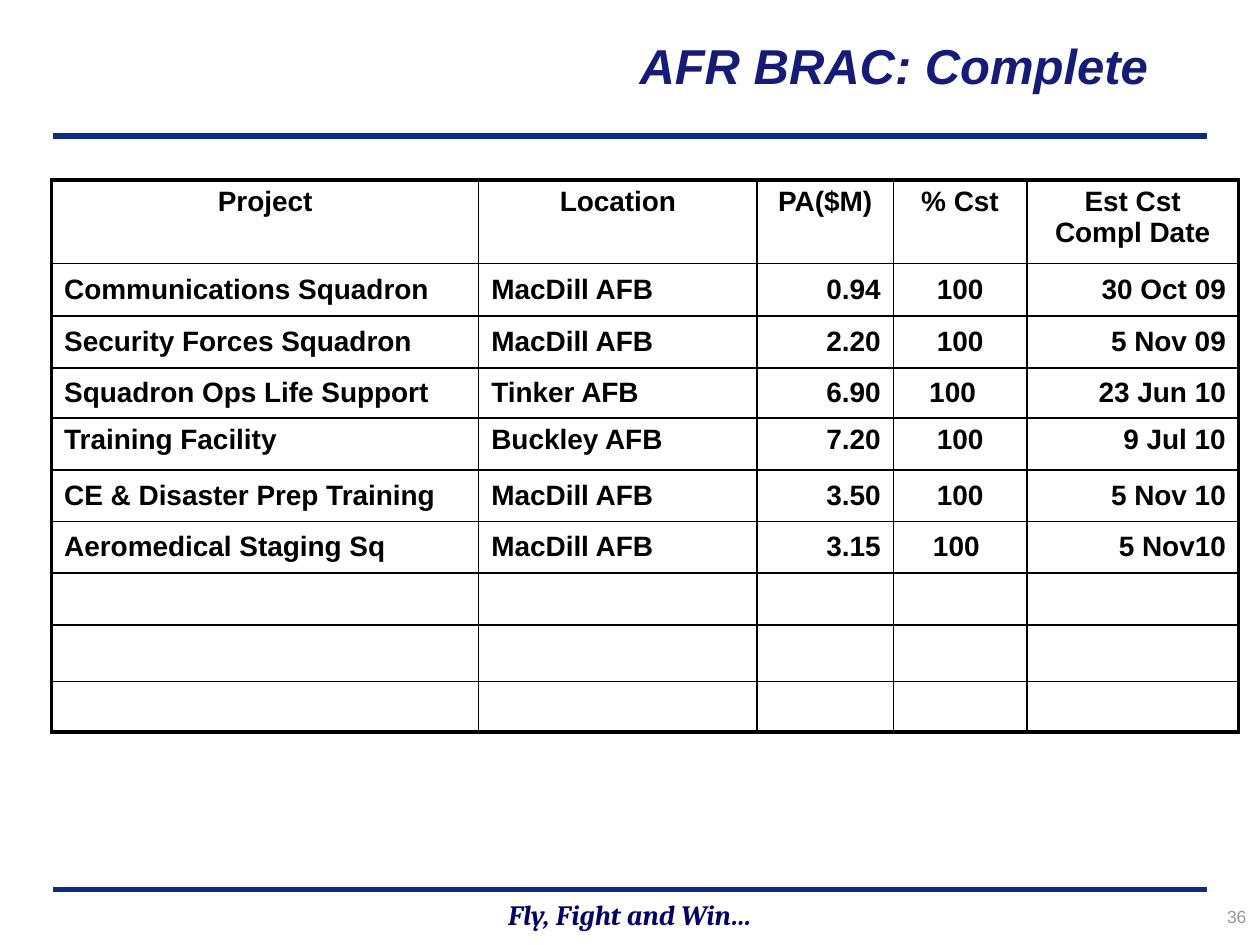
import pptx
import pptx.dml.color
import pptx.enum.shapes
import pptx.enum.text
import pptx.oxml.ns
import pptx.util
from lxml import etree

Inches = pptx.util.Inches
Pt = pptx.util.Pt
ALIGN = pptx.enum.text.PP_ALIGN
ANCHOR = pptx.enum.text.MSO_ANCHOR
qn = pptx.oxml.ns.qn

COLORS = {
    "title": "151C77",
    "rule": "0C2D83",
    "motto": "000066",
    "number": "969696",
    "table": "000000",
}
THICK, THIN = 2.25, 1

COLUMN_WIDTHS = [3.39, 2.21, 1.08, 1.06, 1.68]
ROW_HEIGHTS = [0.66, 0.42, 0.41, 0.4, 0.41, 0.41, 0.41, 0.41, 0.45, 0.4]
COLUMN_ALIGNS = [ALIGN.LEFT, ALIGN.LEFT, ALIGN.RIGHT, ALIGN.CENTER, ALIGN.RIGHT]
PROJECTS = [
    ["Project", "Location", "PA($M)", "% Cst", "Est Cst Compl Date"],
    ["Communications Squadron", "MacDill AFB", "0.94", "100", "30 Oct 09"],
    ["Security Forces Squadron", "MacDill AFB", "2.20", "100", "5 Nov 09"],
    ["Squadron Ops Life Support", "Tinker AFB", "6.90", "100", "23 Jun 10"],
    ["Training Facility", "Buckley AFB", "7.20", "100", "9 Jul 10"],
    ["CE & Disaster Prep Training", "MacDill AFB", "3.50", "100", "5 Nov 10"],
    ["Aeromedical Staging Sq", "MacDill AFB", "3.15", "100", "5 Nov10"],
]
TOP_ANCHORED_ROWS = {0, 4}
PERCENT_COLUMN = 3
PERCENT_RIGHT_MARGINS = {3: 0.22, 6: 0.16}


def write_text(frame, text, size, color, align, font="Arial", bold=False, italic=False):
    frame.text = text
    paragraph = frame.paragraphs[0]
    paragraph.alignment = align
    for span in paragraph.runs:
        span.font.name = font
        span.font.size = Pt(size)
        span.font.bold = bold
        span.font.italic = italic
        span.font.color.rgb = pptx.dml.color.RGBColor.from_string(COLORS[color])


def add_title(page, text):
    title = page.shapes.title
    title.left, title.top = Inches(1.46), Inches(0.19)
    title.width, title.height = Inches(7.75), Inches(0.74)
    frame = title.text_frame
    frame.vertical_anchor = ANCHOR.TOP
    frame.margin_top = Inches(0.09)
    write_text(frame, text, 28, "title", ALIGN.RIGHT, bold=True, italic=True)


def add_rule(page, top):
    line = page.shapes.add_connector(
        pptx.enum.shapes.MSO_CONNECTOR.STRAIGHT,
        Inches(0.42), Inches(top), Inches(9.58), Inches(top))
    line.line.width = Pt(3)
    line.line.color.rgb = pptx.dml.color.RGBColor.from_string(COLORS["rule"])
    etree.SubElement(line._element.spPr, qn("a:effectLst"))


def add_label(page, left, top, width, height, text, size, color, align,
              anchor=ANCHOR.TOP, **style):
    box = page.shapes.add_textbox(
        Inches(left), Inches(top), Inches(width), Inches(height))
    box.text_frame.word_wrap = True
    box.text_frame.vertical_anchor = anchor
    write_text(box.text_frame, text, size, color, align, **style)


def set_borders(cell, widths):
    """Draw the left, right, top and bottom borders with the given point widths."""
    properties = cell._tc.get_or_add_tcPr()
    for side, width in zip("LRTB", widths):
        border = etree.SubElement(properties, qn("a:ln" + side), w=str(Pt(width)))
        fill = etree.SubElement(border, qn("a:solidFill"))
        etree.SubElement(fill, qn("a:srgbClr"), val=COLORS["table"])


def add_project_table(page):
    row_count, column_count = len(ROW_HEIGHTS), len(COLUMN_WIDTHS)
    table = page.shapes.add_table(
        row_count, column_count, Inches(0.41), Inches(1.43),
        Inches(sum(COLUMN_WIDTHS)), Inches(sum(ROW_HEIGHTS))).table
    table.first_row = False
    table.horz_banding = False
    for column, width in zip(table.columns, COLUMN_WIDTHS):
        column.width = Inches(width)
    for row, height in zip(table.rows, ROW_HEIGHTS):
        row.height = Inches(height)

    for r in range(row_count):
        for c in range(column_count):
            cell = table.cell(r, c)
            outer_sides = (c == 0, c == column_count - 1, r == 0, r == row_count - 1)
            set_borders(cell, [THICK if outer else THIN for outer in outer_sides])
            cell.fill.background()
            if r >= len(PROJECTS):
                continue
            align = ALIGN.CENTER if r == 0 else COLUMN_ALIGNS[c]
            write_text(cell.text_frame, PROJECTS[r][c], 16, "table", align, bold=True)
            cell.vertical_anchor = ANCHOR.TOP if r in TOP_ANCHORED_ROWS else ANCHOR.MIDDLE
            if c == PERCENT_COLUMN and r in PERCENT_RIGHT_MARGINS:
                cell.margin_right = Inches(PERCENT_RIGHT_MARGINS[r])


def main():
    deck = pptx.Presentation()
    deck.slide_width, deck.slide_height = Inches(10), Inches(7.5)
    page = deck.slides.add_slide(deck.slide_layouts[5])
    for top in (7.06, 1.08):
        add_rule(page, top)
    add_label(page, 0, 7.07, 10, 0.37, "Fly, Fight and Win…", 16, "motto", ALIGN.CENTER,
              anchor=ANCHOR.MIDDLE, font="Cambria", bold=True, italic=True)
    add_label(page, 8.74, 7.14, 1.25, 0.33, "36", 10, "number", ALIGN.RIGHT)
    add_title(page, "AFR BRAC: Complete")
    add_project_table(page)
    deck.save("out.pptx")


if __name__ == "__main__":
    main()
